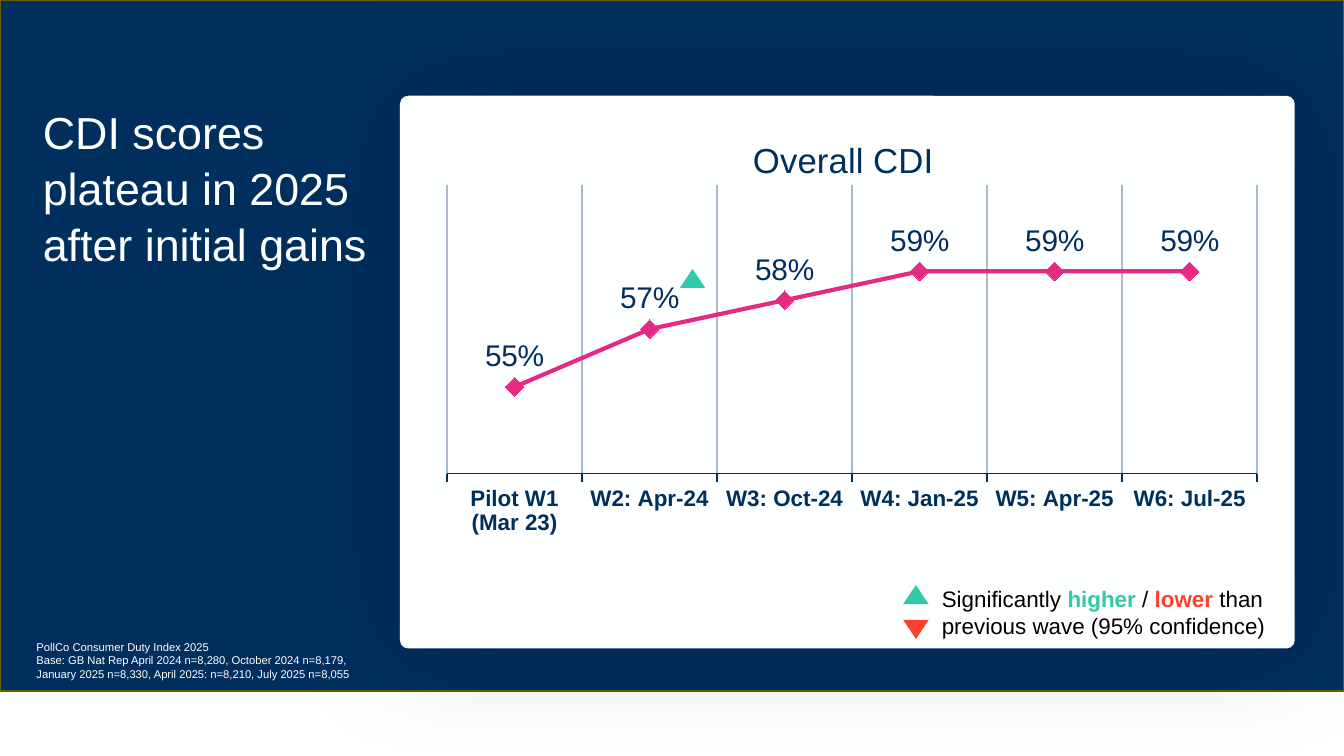
from lxml.etree import SubElement
from pptx import Presentation
from pptx.chart.data import CategoryChartData
from pptx.dml.color import RGBColor
from pptx.enum.chart import XL_CHART_TYPE as ChartType
from pptx.enum.chart import XL_LABEL_POSITION as LabelPosition
from pptx.enum.chart import XL_MARKER_STYLE as MarkerStyle
from pptx.enum.chart import XL_TICK_MARK as TickMark
from pptx.enum.shapes import MSO_SHAPE as Shape
from pptx.oxml import parse_xml
from pptx.oxml.ns import nsdecls, qn
from pptx.util import Cm, Pt

NAVY, WHITE, PINK, BLACK = "002F5E", "FEFFFF", "E52A84", "000000"
GREEN, RED, GRID, OLIVE = "31CAA8", "FF412C", "ADB9CA", "665E00"

HEADLINE = "CDI scores plateau in 2025 after initial gains"
CHART_TITLE = "Overall CDI"
SCORES = [
    ("Pilot W1\n(Mar 23)", 0.55),
    ("W2: Apr-24", 0.57),
    ("W3: Oct-24", 0.58),
    ("W4: Jan-25", 0.59),
    ("W5: Apr-25", 0.59),
    ("W6: Jul-25", 0.59),
]
LEGEND = [
    ("Significantly ", BLACK, False),
    ("higher", GREEN, True),
    (" / ", BLACK, False),
    ("lower", RED, True),
    (" than previous wave (95% confidence)", BLACK, False),
]
SOURCE_LINES = [
    "PollCo Consumer Duty Index 2025",
    "Base: GB Nat Rep April 2024 n=8,280, October 2024 n=8,179, "
    "January 2025 n=8,330, April 2025: n=8,210, July 2025 n=8,055",
]
# left, top, colour, rotation
TRIANGLES = [
    (17.07, 11.05, GREEN, 0),
    (17.07, 11.71, RED, 180),
    (12.85, 5.08, GREEN, 0),
]


def color(value):
    return RGBColor.from_string(value)


def style(font, size, value, bold=False):
    font.name, font.size, font.bold = "Arial", Pt(size), bold
    font.color.rgb = color(value)


def add_filled(page, kind, place, fill):
    shape = page.shapes.add_shape(kind, *map(Cm, place))
    shape.shadow.inherit = False
    shape.fill.solid()
    shape.fill.fore_color.rgb = color(fill)
    shape.line.fill.background()
    return shape


def add_text(page, place, paragraphs, size, inset=None):
    """Each paragraph is a list of (text, colour, bold) runs."""
    box = page.shapes.add_textbox(*map(Cm, place))
    frame = box.text_frame
    frame.word_wrap = True
    if inset is not None:
        frame.margin_left = frame.margin_right = Cm(inset)
        frame.margin_top = frame.margin_bottom = Cm(inset)
    for index, runs in enumerate(paragraphs):
        para = frame.add_paragraph() if index else frame.paragraphs[0]
        for text, value, bold in runs:
            span = para.add_run()
            span.text = text
            style(span.font, size, value, bold)
    return frame


def add_glow(shape):
    effects = shape.element.spPr.find(qn("a:effectLst"))
    shadow = SubElement(effects, qn("a:outerShdw"), blurRad=str(Pt(64.8)),
                        dist="0", dir=str(272 * 60000), algn="ctr", rotWithShape="0")
    shade = SubElement(shadow, qn("a:srgbClr"), val=BLACK)
    SubElement(shade, qn("a:alpha"), val="19000")


def set_layout(parent, index, **settings):
    """Place a chart part by fractions of the chart's size."""
    for old in parent.findall(qn("c:layout")):
        parent.remove(old)
    layout = parse_xml(f"<c:layout {nsdecls('c')}><c:manualLayout/></c:layout>")
    for name, value in settings.items():
        SubElement(layout[0], qn(f"c:{name}"), val=str(value))
    parent.insert(index, layout)


def add_score_chart(page):
    data = CategoryChartData(number_format="0%")
    data.categories = [wave for wave, _ in SCORES]
    data.add_series(CHART_TITLE, [score for _, score in SCORES])
    place = map(Cm, (8.05, 2.21, 15.95, 8.53))
    chart = page.shapes.add_chart(ChartType.LINE_MARKERS, *place, data).chart
    style(chart.font, 10, NAVY)
    chart.has_legend = False

    chart.has_title = True
    title = chart.chart_title
    span = title.text_frame.paragraphs[0].add_run()
    span.text = CHART_TITLE
    style(span.font, 18.6, NAVY)
    title.include_in_layout = False
    set_layout(title._element, 1, xMode="edge", yMode="edge", x=0.38, y=0.03)
    set_layout(chart._chartSpace.chart.plotArea, 0, layoutTarget="inner",
               xMode="edge", yMode="edge", x=1 / 40, y=0.15, w=0.96, h=0.64)

    waves = chart.category_axis
    style(waves.tick_labels.font, 12, NAVY, True)
    waves.major_tick_mark = TickMark.OUTSIDE
    waves.has_major_gridlines = True
    for line, value in ((waves.format.line, NAVY), (waves.major_gridlines.format.line, GRID)):
        line.color.rgb = color(value)
        line.width = Pt(0.75)
    scale = chart.value_axis
    scale.minimum_scale, scale.maximum_scale = 0.52, 0.62
    scale.has_major_gridlines = False
    scale.visible = False

    plot = chart.plots[0]
    plot.vary_by_categories = False
    series = plot.series[0]
    series.smooth = False
    series.format.line.color.rgb = color(PINK)
    series.format.line.width = Pt(2.25)
    marker = series.marker
    marker.style, marker.size = MarkerStyle.DIAMOND, 10
    marker.format.fill.solid()
    marker.format.fill.fore_color.rgb = color(PINK)
    marker.format.line.color.rgb = color(PINK)
    labels = series.data_labels
    labels.show_value = True
    labels.position = LabelPosition.ABOVE
    labels.number_format, labels.number_format_is_linked = "0%", False
    style(labels.font, 16, NAVY)


def main():
    deck = Presentation()
    deck.slide_width, deck.slide_height = Cm(25.4), Cm(14.28)
    page = deck.slides.add_slide(deck.slide_layouts[6])
    page.background.fill.solid()
    page.background.fill.fore_color.rgb = color(WHITE)

    panel = add_filled(page, Shape.RECTANGLE, (0, 0, 25.4, 13.06), NAVY)
    panel.line.color.rgb = color(OLIVE)
    panel.line.width = Pt(1)
    card = add_filled(page, Shape.ROUNDED_RECTANGLE, (7.56, 1.81, 16.91, 10.44), WHITE)
    card.adjustments[0] = 0.015
    add_glow(card)
    add_score_chart(page)

    headline = add_text(page, (0.56, 1.81, 6.65, 2.77), [[(HEADLINE, WHITE, False)]], 24)
    headline.paragraphs[0].line_spacing = Pt(30)
    for left, top, fill, turn in TRIANGLES:
        triangle = add_filled(page, Shape.ISOSCELES_TRIANGLE, (left, top, 0.48, 0.36), fill)
        triangle.rotation = turn
    add_text(page, (17.8, 11.05, 7.14, 1.02), [LEGEND], 12, inset=0)
    add_text(page, (0.69, 12.09, 6.4, 0.76),
             [[(line, WHITE, False)] for line in SOURCE_LINES], 6, inset=0)
    deck.save("out.pptx")


if __name__ == "__main__":
    main()
